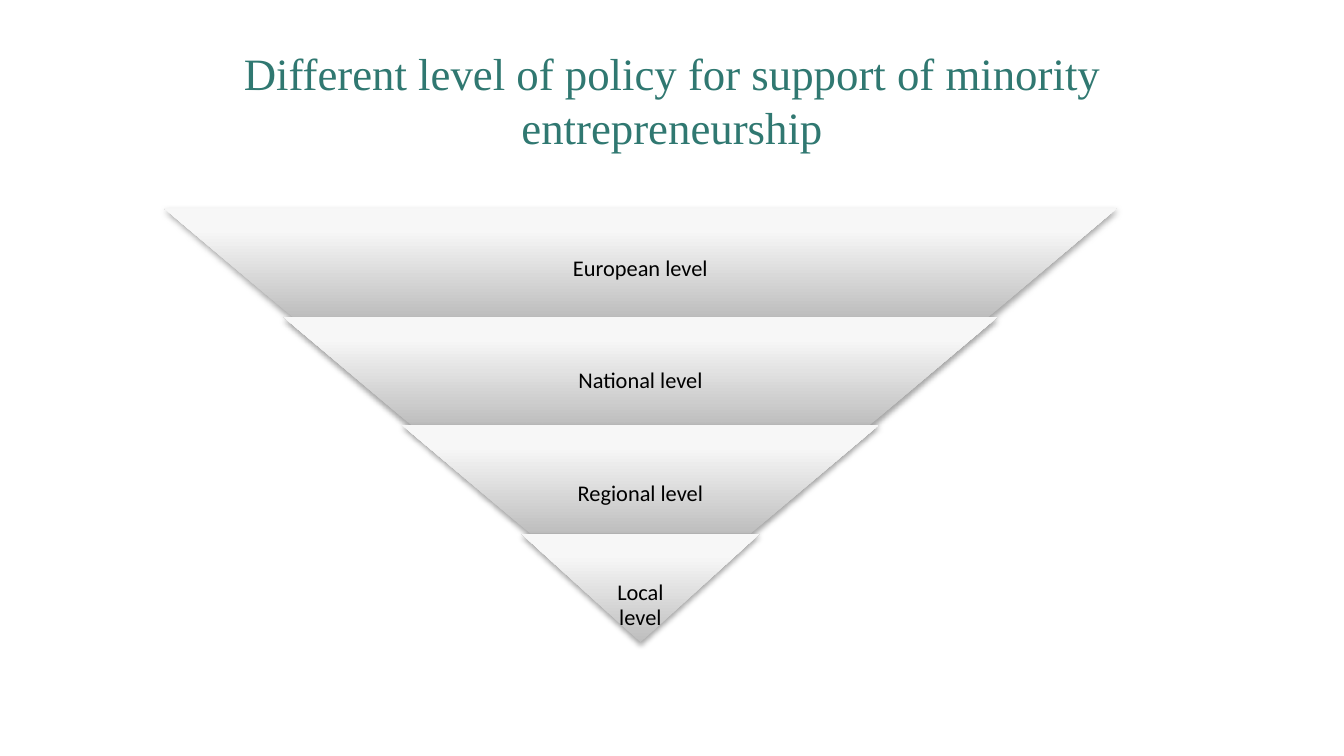
from dataclasses import dataclass

import pptx
import pptx.dml.color
import pptx.enum.shapes
import pptx.enum.text
import pptx.oxml
import pptx.oxml.ns
import pptx.util

Pt = pptx.util.Pt


@dataclass(frozen=True)
class Theme:
    title_color: str = "307871"
    label_color: str = "000000"
    shadow_color: str = "000000"
    gradient: tuple = ((0, "BEBEBE"), (80, "F7F7F7"), (100, "F8F8F8"))
    title_font: str = "Times New Roman"
    label_font: str = "Calibri"
    title_size: int = 24
    label_size: int = 12


THEME = Theme()

PYRAMID_CENTER = 343.1
PYRAMID_TOP = 111.6
TIER_HEIGHT = 58.1
TIER_WIDTH_STEP = 127.6
TIER_SLANT = 1.182

# Label, label width, label height; widest tier first
TIERS = [
    ("European level", 239.8, 50.4),
    ("National level", 157, 47.5),
    ("Regional level", 74.2, 41.8),
    ("Local level", 42.5, 38.9),
]


def format_text(text_frame, font_name, size, color, margins, anchor):
    text_frame.word_wrap = True
    text_frame.auto_size = pptx.enum.text.MSO_AUTO_SIZE.NONE
    text_frame.vertical_anchor = anchor
    horizontal, vertical = margins
    text_frame.margin_left = text_frame.margin_right = Pt(horizontal)
    text_frame.margin_top = text_frame.margin_bottom = Pt(vertical)
    for paragraph in text_frame.paragraphs:
        paragraph.alignment = pptx.enum.text.PP_ALIGN.CENTER
        for run in paragraph.runs:
            run.font.name = font_name
            run.font.size = Pt(size)
            run.font.color.rgb = pptx.dml.color.RGBColor.from_string(color)


def add_title(slide, text):
    title = slide.shapes.title
    title.left, title.top = Pt(49.7), Pt(21.6)
    title.width, title.height = Pt(620.6), Pt(78.5)
    title.text_frame.text = text
    format_text(title.text_frame, THEME.title_font, THEME.title_size,
                THEME.title_color, (5, 2.9), pptx.enum.text.MSO_ANCHOR.TOP)


def apply_gradient_and_shadow(shape):
    """Shade the shape upwards, whatever its rotation, over a soft shadow."""
    namespace = pptx.oxml.ns.nsdecls("a")
    stops = "".join(
        f'<a:gs pos="{position * 1000}"><a:srgbClr val="{color}"/></a:gs>'
        for position, color in THEME.gradient
    )
    gradient = pptx.oxml.parse_xml(
        f'<a:gradFill {namespace} rotWithShape="0"><a:gsLst>{stops}</a:gsLst>'
        '<a:lin ang="16200000" scaled="0"/></a:gradFill>'
    )
    shadow = pptx.oxml.parse_xml(
        f'<a:effectLst {namespace}><a:outerShdw blurRad="{Pt(3.1)}" '
        f'dist="{Pt(1.8)}" dir="5400000" rotWithShape="0">'
        f'<a:srgbClr val="{THEME.shadow_color}"><a:alpha val="35000"/>'
        '</a:srgbClr></a:outerShdw></a:effectLst>'
    )
    shape.line.fill.background()
    properties = shape.element.spPr
    properties.find(pptx.oxml.ns.qn("a:ln")).addprevious(gradient)
    properties.append(shadow)


def add_tier(group, top, width):
    tier = group.shapes.add_shape(
        pptx.enum.shapes.MSO_SHAPE.TRAPEZOID,
        Pt(PYRAMID_CENTER - width / 2), Pt(top), Pt(width), Pt(TIER_HEIGHT))
    tier.rotation = 180
    tier.adjustments[0] = TIER_SLANT
    apply_gradient_and_shadow(tier)


def add_label(group, text, bottom, width, height):
    label = group.shapes.add_textbox(
        Pt(PYRAMID_CENTER - width / 2), Pt(bottom - height),
        Pt(width), Pt(height))
    label.text_frame.text = text
    format_text(label.text_frame, THEME.label_font, THEME.label_size,
                THEME.label_color, (1.2, 1.2),
                pptx.enum.text.MSO_ANCHOR.MIDDLE)
    paragraph = label.text_frame.paragraphs[0]
    paragraph.line_spacing = 0.9
    paragraph.space_after = Pt(4.2)


def add_inverted_pyramid(slide):
    group = slide.shapes.add_group_shape()
    for index, (text, label_width, label_height) in enumerate(TIERS):
        top = PYRAMID_TOP + index * TIER_HEIGHT
        add_tier(group, top, TIER_WIDTH_STEP * (len(TIERS) - index))
        add_label(group, text, top + TIER_HEIGHT, label_width, label_height)


def main():
    presentation = pptx.Presentation()
    presentation.slide_width = Pt(720)
    presentation.slide_height = Pt(405)
    title_only_layout = presentation.slide_layouts[5]
    slide = presentation.slides.add_slide(title_only_layout)
    add_title(slide, "Different level of policy for support of minority "
                     "entrepreneurship")
    add_inverted_pyramid(slide)
    presentation.save("out.pptx")


if __name__ == "__main__":
    main()
